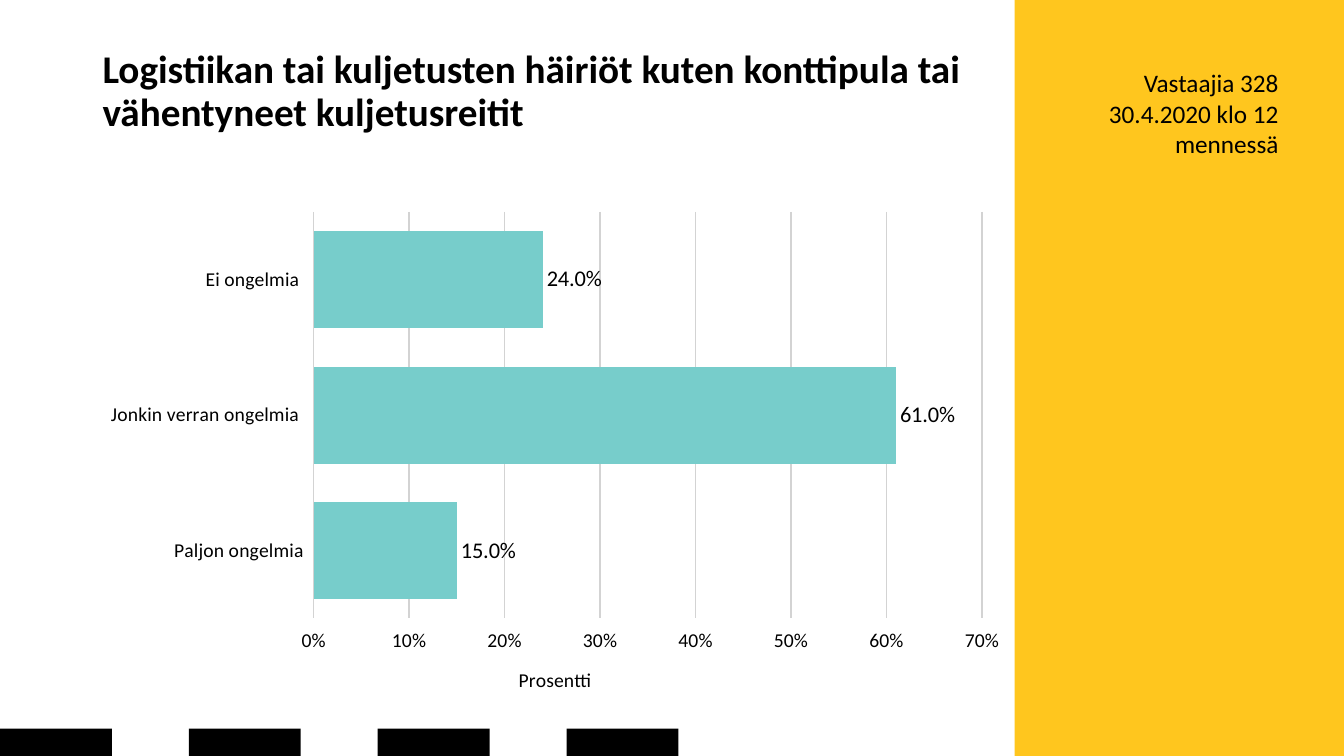
"""Builds a survey slide with a bar chart and a yellow side panel."""
import pptx
import pptx.chart.data
import pptx.dml.color
import pptx.enum.chart
import pptx.enum.shapes
import pptx.enum.text
import pptx.util

Cm = pptx.util.Cm
Pt = pptx.util.Pt
RGBColor = pptx.dml.color.RGBColor

YELLOW = RGBColor(0xFF, 0xC6, 0x1E)
BLACK = RGBColor(0x00, 0x00, 0x00)
TEAL = RGBColor(0x77, 0xCD, 0xCB)
GRID_GREY = RGBColor(0xD3, 0xD3, 0xD3)

SLIDE_WIDTH, SLIDE_HEIGHT = Cm(33.87), Cm(19.05)
ANSWERS = {"Ei ongelmia ": 0.24, "Jonkin verran ongelmia ": 0.61, "Paljon ongelmia": 0.15}


def apply_format(target, values):
    """Set each named attribute of the target."""
    for name, value in values.items():
        setattr(target, name, value)


def format_font(font, size, bold=False):
    """Give a font the typeface, size and colour of the slide."""
    apply_format(font, {"name": "Calibri", "size": Pt(size), "bold": bold})
    font.color.rgb = BLACK


def add_block(page, left, top, width, height, colour):
    """Add a plain filled rectangle."""
    block = page.shapes.add_shape(
        pptx.enum.shapes.MSO_SHAPE.RECTANGLE, left, top, width, height)
    block.shadow.inherit = False
    block.fill.solid()
    block.fill.fore_color.rgb = colour
    block.line.fill.background()


def fill_title(page, text):
    """Place and format the title placeholder."""
    title = page.shapes.title
    apply_format(title, {"left": Cm(2.33), "top": Cm(1.02),
                         "width": Cm(23.32), "height": Cm(2.61)})
    apply_format(title.text_frame, {
        "text": text,
        "word_wrap": True,
        "auto_size": pptx.enum.text.MSO_AUTO_SIZE.NONE,
        "vertical_anchor": pptx.enum.text.MSO_ANCHOR.MIDDLE})
    para = title.text_frame.paragraphs[0]
    apply_format(para, {"alignment": pptx.enum.text.PP_ALIGN.LEFT, "line_spacing": 0.9})
    format_font(para.runs[0].font, 28, bold=True)


def add_note(page, lines):
    """Add the right-aligned note on the side panel."""
    box = page.shapes.add_textbox(Cm(27.21), Cm(1.58), Cm(5.26), Cm(2.57))
    apply_format(box.text_frame, {
        "text": "\n".join(lines),
        "word_wrap": True,
        "auto_size": pptx.enum.text.MSO_AUTO_SIZE.SHAPE_TO_FIT_TEXT})
    for para in box.text_frame.paragraphs:
        para.alignment = pptx.enum.text.PP_ALIGN.RIGHT
        format_font(para.runs[0].font, 18)


def format_axis(axis, values):
    """Format an axis without a line and with small labels."""
    tick_mark = pptx.enum.chart.XL_TICK_MARK
    apply_format(axis, {"major_tick_mark": tick_mark.CROSS,
                        "minor_tick_mark": tick_mark.NONE, **values})
    axis.format.line.fill.background()
    format_font(axis.tick_labels.font, 14)


def add_answer_chart(page):
    """Add the bar chart of the answer shares."""
    data = pptx.chart.data.CategoryChartData(number_format="0.0%")
    data.categories = list(ANSWERS)
    data.add_series("Series 1", list(ANSWERS.values()))
    chart = page.shapes.add_chart(
        pptx.enum.chart.XL_CHART_TYPE.BAR_CLUSTERED,
        Cm(2.33), Cm(5.08), Cm(23.32), Cm(12.95), data).chart
    apply_format(chart, {"has_legend": False, "has_title": False})
    format_font(chart.font, 18)

    format_axis(chart.category_axis, {"reverse_order": True, "has_major_gridlines": False})
    axis = chart.value_axis
    format_axis(axis, {
        "minimum_scale": 0, "maximum_scale": 0.7, "major_unit": 0.1,
        "has_major_gridlines": True, "has_title": True,
        "tick_label_position": pptx.enum.chart.XL_TICK_LABEL_POSITION.HIGH})
    apply_format(axis.tick_labels, {"number_format": "0%", "number_format_is_linked": False})
    grid_line = axis.major_gridlines.format.line
    grid_line.width = Pt(1)
    grid_line.color.rgb = GRID_GREY
    axis.axis_title.text_frame.text = "Prosentti"
    format_font(axis.axis_title.text_frame.paragraphs[0].runs[0].font, 14)

    plot = chart.plots[0]
    apply_format(plot, {"gap_width": 40, "vary_by_categories": False, "has_data_labels": True})
    apply_format(plot.data_labels, {
        "show_value": True,
        "number_format": "0.0%",
        "number_format_is_linked": False,
        "position": pptx.enum.chart.XL_LABEL_POSITION.OUTSIDE_END})
    format_font(plot.data_labels.font, 16)
    bars = plot.series[0].format
    bars.fill.solid()
    bars.fill.fore_color.rgb = TEAL
    bars.line.fill.background()


def main():
    """Build the deck and save it."""
    deck = pptx.Presentation()
    apply_format(deck, {"slide_width": SLIDE_WIDTH, "slide_height": SLIDE_HEIGHT})
    page = deck.slides.add_slide(deck.slide_layouts[5])
    add_block(page, Cm(25.57), 0, Cm(8.3), SLIDE_HEIGHT, YELLOW)
    for index in range(4):
        add_block(page, Cm(4.76 * index), Cm(18.36), Cm(2.82), Cm(0.69), BLACK)
    fill_title(page, "Logistiikan tai kuljetusten häiriöt kuten konttipula tai "
                     "vähentyneet kuljetusreitit")
    add_note(page, ["Vastaajia 328", "30.4.2020 klo 12 mennessä"])
    add_answer_chart(page)
    deck.save("out.pptx")


if __name__ == "__main__":
    main()
